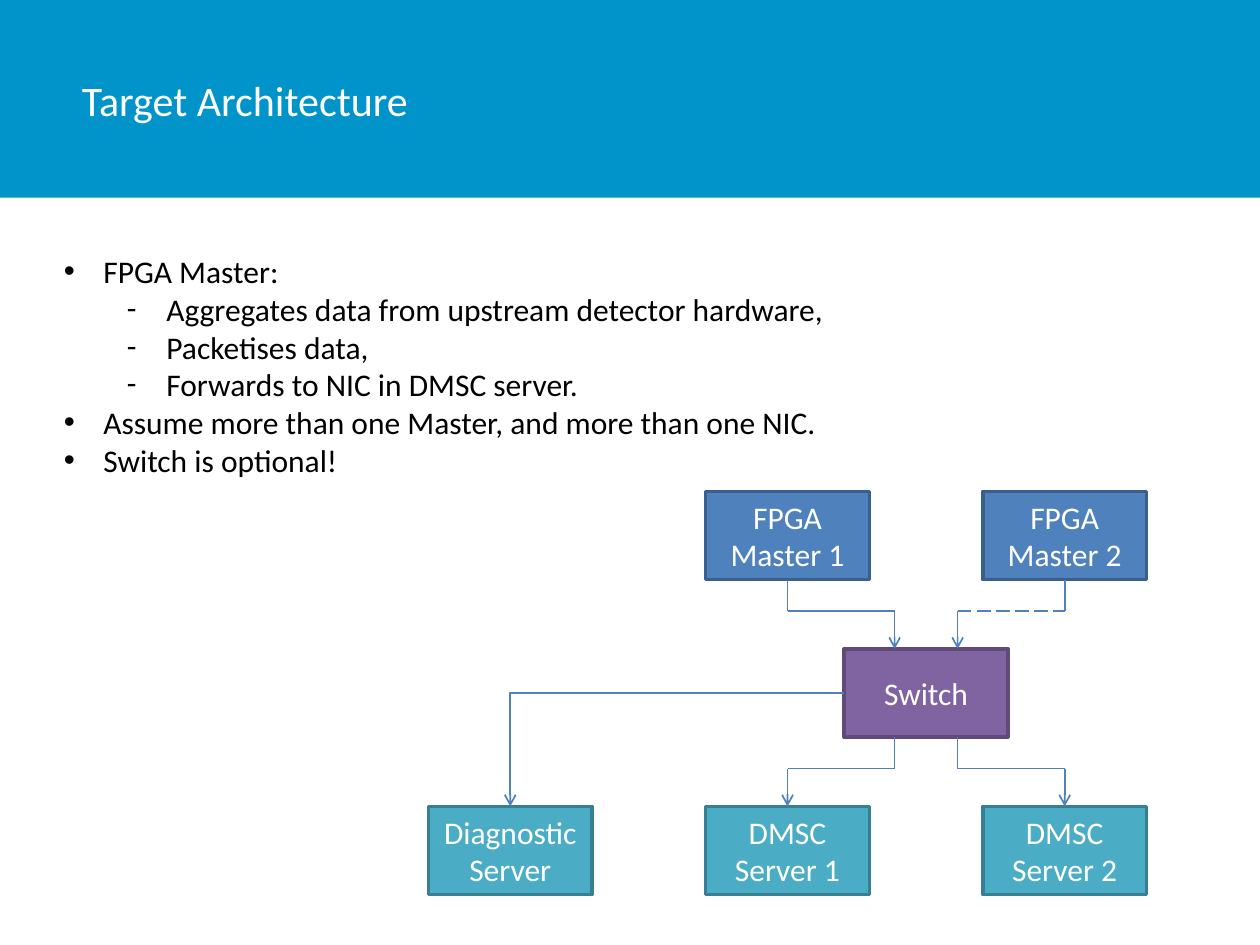
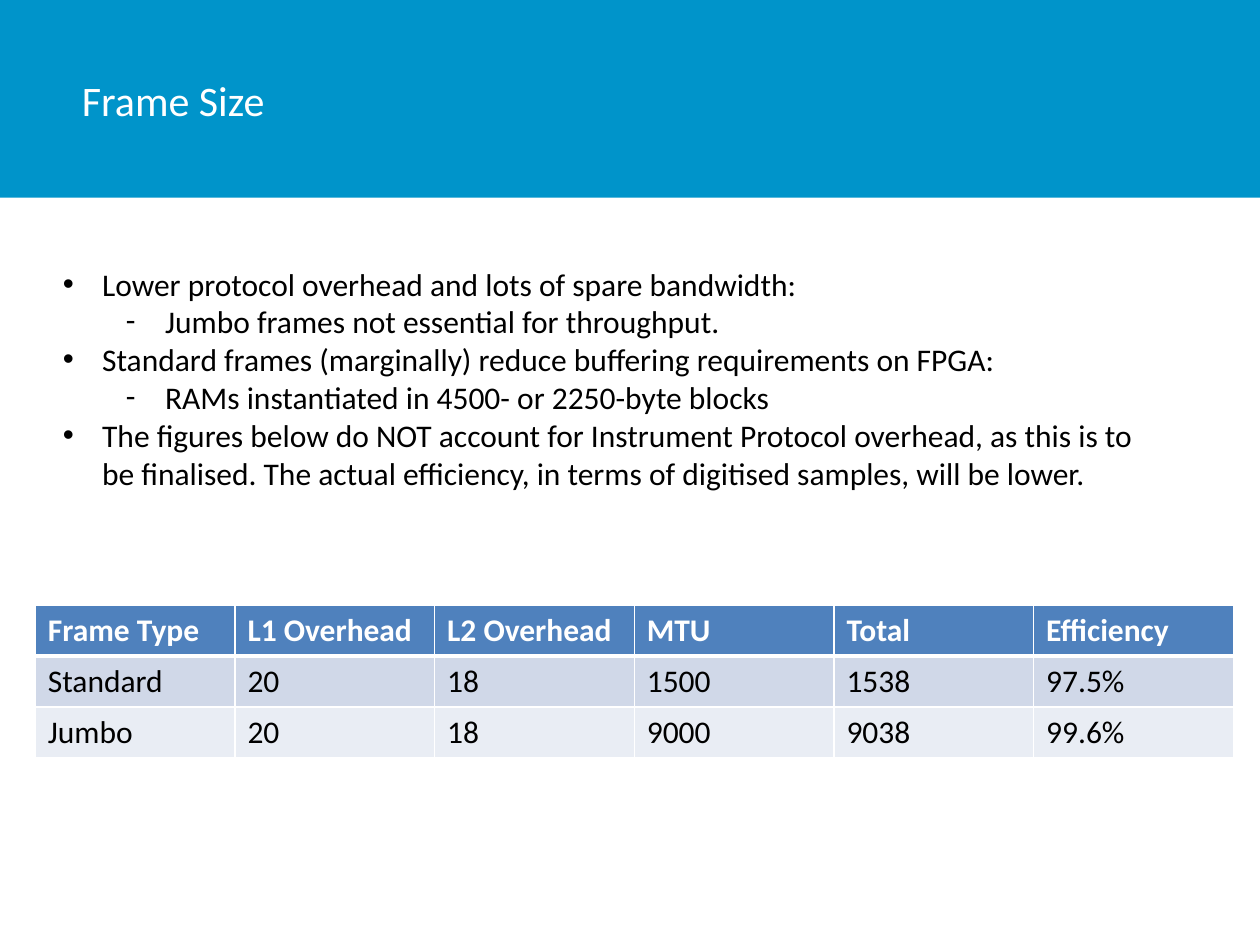
import pptx
import pptx.util
import pptx.dml.color
import pptx.enum.dml
import pptx.enum.shapes
import pptx.enum.text
import pptx.oxml.ns
from lxml import etree

Pt = pptx.util.Pt
RGBColor = pptx.dml.color.RGBColor
MSO_ANCHOR = pptx.enum.text.MSO_ANCHOR
PP_ALIGN = pptx.enum.text.PP_ALIGN
MSO_CONNECTOR = pptx.enum.shapes.MSO_CONNECTOR
RECTANGLE = pptx.enum.shapes.MSO_SHAPE.RECTANGLE
qn = pptx.oxml.ns.qn

BAND_BLUE = RGBColor(0x00, 0x94, 0xCA)
WHITE = RGBColor(0xFF, 0xFF, 0xFF)
BLACK = RGBColor(0x00, 0x00, 0x00)
LINK_BLUE = RGBColor(0x4F, 0x81, 0xBD)
MASTER_EDGE = RGBColor(0x3A, 0x5F, 0x8C)
SWITCH_PURPLE = RGBColor(0x80, 0x64, 0xA2)
SWITCH_EDGE = RGBColor(0x5F, 0x4A, 0x78)
SERVER_TEAL = RGBColor(0x4B, 0xAC, 0xC6)
SERVER_EDGE = RGBColor(0x37, 0x7F, 0x92)
ROW_DARK = RGBColor(0xD0, 0xD8, 0xE8)
ROW_LIGHT = RGBColor(0xE9, 0xED, 0xF4)

FONT = "Calibri"
BODY_SIZE = 18
SLIDE_WIDTH, SLIDE_HEIGHT = 720, 540
BAND_HEIGHT = 113

NODE_WIDTH, NODE_HEIGHT = 93.6, 50.4
COLUMN_LEFT, COLUMN_PITCH = 244.8, 158.4
ROW_TOP, ROW_PITCH = 280.8, 90
BEND_DROP = 18
PORT_OFFSET = 18

BULLETS = {0: ("•", "Arial", 22.5), 1: ("-", FONT, 58.5)}
HANGING = 22.5

ARCHITECTURE_POINTS = [
    (0, "FPGA Master:"),
    (1, "Aggregates data from upstream detector hardware,"),
    (1, "Packetises data,"),
    (1, "Forwards to NIC in DMSC server."),
    (0, "Assume more than one Master, and more than one NIC."),
    (0, "Switch is optional!"),
]
FRAME_POINTS = [
    (0, "Lower protocol overhead and lots of spare bandwidth:"),
    (1, "Jumbo frames not essential for throughput."),
    (0, "Standard frames (marginally) reduce buffering requirements on FPGA:"),
    (1, "RAMs instantiated in 4500- or 2250-byte blocks"),
    (0, "The figures below do NOT account for Instrument Protocol overhead, as this is to\v"
        "be finalised. The actual efficiency, in terms of digitised samples, will be lower."),
]
FRAME_ROWS = [
    ("Frame Type", "L1 Overhead", "L2 Overhead", "MTU", "Total", "Efficiency"),
    ("Standard", "20", "18", "1500", "1538", "97.5%"),
    ("Jumbo", "20", "18", "9000", "9038", "99.6%"),
]


def set_font(paragraph, color, size=BODY_SIZE, bold=False):
    paragraph.font.name = FONT
    paragraph.font.size = Pt(size)
    paragraph.font.bold = bold
    paragraph.font.color.rgb = color


def add_rectangle(slide, left, top, width, height, fill):
    rectangle = slide.shapes.add_shape(RECTANGLE, Pt(left), Pt(top), Pt(width), Pt(height))
    rectangle.shadow.inherit = False
    rectangle.fill.solid()
    rectangle.fill.fore_color.rgb = fill
    return rectangle


def add_titled_slide(deck, heading):
    slide = deck.slides.add_slide(deck.slide_layouts[5])
    band = add_rectangle(slide, 0, 0, SLIDE_WIDTH, BAND_HEIGHT, BAND_BLUE)
    band.line.fill.background()
    title = slide.shapes.title
    title._element.addprevious(band._element)
    title.left, title.top, title.width, title.height = Pt(46.8), Pt(0), Pt(453.6), Pt(113.8)
    frame = title.text_frame
    frame.margin_left = frame.margin_right = frame.margin_top = frame.margin_bottom = 0
    frame.vertical_anchor = MSO_ANCHOR.MIDDLE
    frame.text = heading
    frame.paragraphs[0].alignment = PP_ALIGN.LEFT
    set_font(frame.paragraphs[0], WHITE, 24)
    return slide


def add_bullets(slide, left, top, points):
    height = 7.2 + 22 * len(points)
    frame = slide.shapes.add_textbox(Pt(left), Pt(top), Pt(640), Pt(height)).text_frame
    frame.word_wrap = True
    for index, (level, text) in enumerate(points):
        paragraph = frame.add_paragraph() if index else frame.paragraphs[0]
        paragraph.text = text
        paragraph.level = level
        mark, mark_font, indent = BULLETS[level]
        properties = paragraph._p.get_or_add_pPr()
        properties.set("marL", str(Pt(indent)))
        properties.set("indent", str(-Pt(HANGING)))
        etree.SubElement(properties, qn("a:buFont"), typeface=mark_font)
        etree.SubElement(properties, qn("a:buChar"), char=mark)
        set_font(paragraph, BLACK)


def add_node(slide, column, row, label, fill, edge):
    node = add_rectangle(slide, COLUMN_LEFT + column * COLUMN_PITCH, ROW_TOP + row * ROW_PITCH,
                         NODE_WIDTH, NODE_HEIGHT, fill)
    node.line.color.rgb = edge
    node.line.width = Pt(2)
    frame = node.text_frame
    frame.word_wrap = True
    frame.vertical_anchor = MSO_ANCHOR.MIDDLE
    frame.text = label
    frame.paragraphs[0].alignment = PP_ALIGN.CENTER
    set_font(frame.paragraphs[0], WHITE)
    return node


def add_link(slide, start, end, arrow=False, dashed=False, kind=MSO_CONNECTOR.STRAIGHT):
    link = slide.shapes.add_connector(kind, *start, *end)
    link.line.color.rgb = LINK_BLUE
    link.line.width = Pt(1)
    if dashed:
        link.line.dash_style = pptx.enum.dml.MSO_LINE.LONG_DASH
    if arrow:
        etree.SubElement(link.line._get_or_add_ln(), qn("a:tailEnd"), type="arrow")
    etree.SubElement(link._element.spPr, qn("a:effectLst"))
    return link


def add_route(slide, start_x, end_x, start_y, end_y, dashed=False):
    bend_y = start_y + Pt(BEND_DROP)
    add_link(slide, (start_x, start_y), (start_x, bend_y))
    add_link(slide, (min(start_x, end_x), bend_y), (max(start_x, end_x), bend_y), dashed=dashed)
    add_link(slide, (end_x, bend_y), (end_x, end_y), arrow=True)


def add_corner_link(slide, source, target):
    start = (source.left, source.top + source.height // 2)
    end = (target.left + target.width // 2, target.top)
    corner = add_link(slide, start, end, arrow=True, kind=MSO_CONNECTOR.ELBOW)
    corner._element.spPr.find(qn("a:prstGeom")).set("prst", "bentConnector2")
    corner.begin_connect(source, 1)
    corner.end_connect(target, 0)


def add_architecture(slide):
    masters = [add_node(slide, column, 0, f"FPGA Master {column}", LINK_BLUE, MASTER_EDGE)
               for column in (1, 2)]
    switch = add_node(slide, 1.5, 1, "Switch", SWITCH_PURPLE, SWITCH_EDGE)
    diagnostic, *servers = [
        add_node(slide, column, 2, label, SERVER_TEAL, SERVER_EDGE)
        for column, label in enumerate(("Diagnostic Server", "DMSC Server 1", "DMSC Server 2"))]
    add_corner_link(slide, switch, diagnostic)
    switch_middle = switch.left + switch.width // 2
    for side, master, server in zip((-1, 1), masters, servers):
        port_x = switch_middle + side * Pt(PORT_OFFSET)
        column_x = master.left + master.width // 2
        add_route(slide, column_x, port_x, master.top + master.height, switch.top, side > 0)
        add_route(slide, port_x, column_x, switch.top + switch.height, server.top)


def add_cell_borders(cell, top, bottom):
    properties = cell._tc.get_or_add_tcPr()
    for edge, width in (("lnL", 1), ("lnR", 1), ("lnT", top), ("lnB", bottom)):
        border = etree.SubElement(properties, qn(f"a:{edge}"), w=str(Pt(width)))
        fill = etree.SubElement(border, qn("a:solidFill"))
        etree.SubElement(fill, qn("a:srgbClr"), val=str(WHITE))


def add_frame_table(slide, rows):
    column_width, row_height = 114.12, 29.2
    columns = len(rows[0])
    table = slide.shapes.add_table(len(rows), columns, Pt(20.16), Pt(345.6),
                                   Pt(column_width * columns), Pt(row_height * len(rows))).table
    for column in table.columns:
        column.width = Pt(column_width)
    row_fills = (LINK_BLUE, ROW_DARK, ROW_LIGHT)
    for row_index, (values, fill) in enumerate(zip(rows, row_fills)):
        header = row_index == 0
        table.rows[row_index].height = Pt(row_height)
        for column_index, value in enumerate(values):
            cell = table.cell(row_index, column_index)
            add_cell_borders(cell, 3 if row_index == 1 else 1, 3 if header else 1)
            cell.fill.solid()
            cell.fill.fore_color.rgb = fill
            cell.text = value
            set_font(cell.text_frame.paragraphs[0], WHITE if header else BLACK, bold=header)


def main():
    deck = pptx.Presentation()
    deck.slide_width, deck.slide_height = Pt(SLIDE_WIDTH), Pt(SLIDE_HEIGHT)

    architecture = add_titled_slide(deck, "Target Architecture")
    add_bullets(architecture, 29.5, 140.4, ARCHITECTURE_POINTS)
    add_architecture(architecture)

    frame_size = add_titled_slide(deck, "Frame Size")
    add_frame_table(frame_size, FRAME_ROWS)
    add_bullets(frame_size, 28.8, 147.6, FRAME_POINTS)

    deck.save("out.pptx")


if __name__ == "__main__":
    main()
